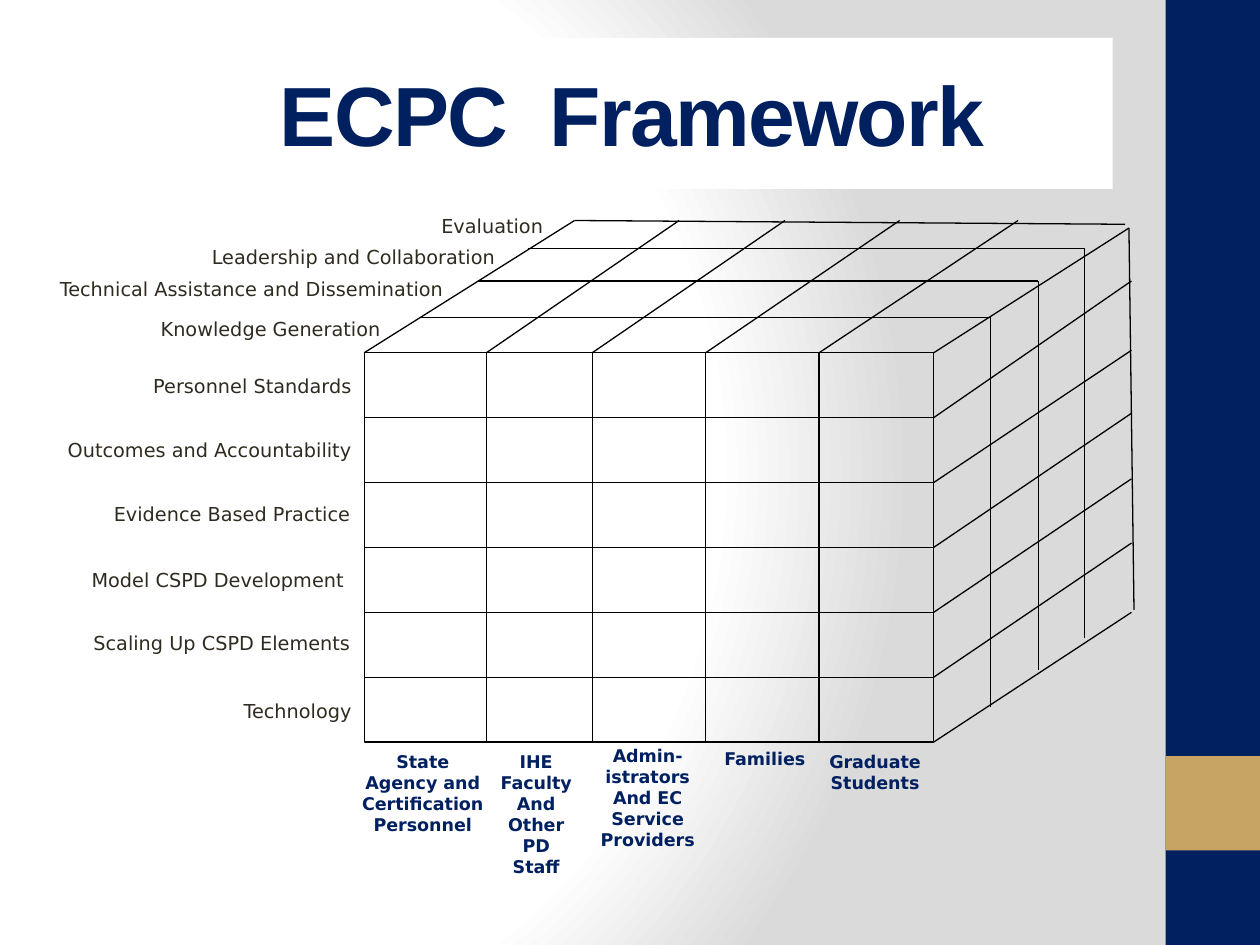
from typing import NamedTuple

from pptx import Presentation
from pptx.dml.color import RGBColor
from pptx.enum.shapes import MSO_CONNECTOR, MSO_SHAPE
from pptx.enum.text import MSO_ANCHOR, PP_ALIGN
from pptx.oxml import parse_xml
from pptx.oxml.ns import nsdecls, qn
from pptx.util import Inches, Pt

RECTANGLE = MSO_SHAPE.RECTANGLE
STRAIGHT = MSO_CONNECTOR.STRAIGHT
CENTER, RIGHT = PP_ALIGN.CENTER, PP_ALIGN.RIGHT
MIDDLE = MSO_ANCHOR.MIDDLE

COLORS = {"navy": "002060", "gold": "C8A464", "white": "FFFFFF",
          "gray": "DADADA", "ink": "2F2B20", "line": "000000"}
TITLE_FONT, LABEL_FONT = "Arial", "DejaVu Sans"

# The slide is a grid of 10 columns by 7.5 rows of square cells.
COLUMNS, ROWS = 10, 7.5
CELL = Inches(1)


class Box(NamedTuple):
    left: float
    top: float
    width: float
    height: float


class Label(NamedTuple):
    text: str
    box: Box


class Layer(NamedTuple):
    """A slice of the cube's depth: top edge, then right edge downwards."""
    left: float
    right: float
    top: float


# Front face of the cube, and where its edges meet the back
FRONT = Box(2.89, 2.8, 4.52, 3.09)
FRONT_RIGHT = FRONT.left + FRONT.width
FRONT_BOTTOM = FRONT.top + FRONT.height
FRONT_ROWS = 6
ROW_HEIGHT = FRONT.height / FRONT_ROWS
COLUMN_EDGES = [FRONT.left, 3.86, 4.7, 5.6, 6.5, FRONT_RIGHT]
BACK_COLUMN_EDGES = [4.56, 5.39, 6.23, 7.14, 8.08, 8.96]
BACK_TOP, BACK_RIGHT, BACK_CORNER = 1.75, 8.98, (8.96, 1.81)
BACK_ROW_EDGES = [2.23, 2.78, 3.28, 3.8, 4.31, 4.86]
LAYERS = [Layer(4.19, 8.61, 1.97), Layer(3.79, 8.24, 2.23), Layer(3.34, 7.86, 2.52)]

# Right edge and top of each right-aligned label
LABEL_WIDTH, LABEL_HEIGHT = 3.4, 0.26
SIDE_LABELS = [
    ("Evaluation", 4.41, 1.65),
    ("Leadership and Collaboration", 4.03, 1.9),
    ("Technical Assistance and Dissemination", 3.62, 2.15),
    ("Knowledge Generation", 3.12, 2.47),
    ("Personnel Standards", 2.89, 2.92),
    ("Outcomes and Accountability", 2.89, 3.43),
    ("Evidence Based Practice", 2.88, 3.94),
    ("Model CSPD Development", 2.83, 4.46),
    ("Scaling Up CSPD Elements", 2.88, 4.96),
    ("Technology", 2.89, 5.5),
]
COLUMN_LABELS = [
    Label("State Agency and Certification Personnel", Box(2.76, 5.91, 1.19, 0.77)),
    Label("IHE Faculty\nAnd Other PD Staff", Box(3.85, 5.91, 0.81, 1.11)),
    Label("Admin-\nistrators\nAnd EC Service\nProviders", Box(4.6, 5.86, 1.08, 1.11)),
    Label("Families", Box(5.64, 5.89, 0.86, 0.27)),
    Label("Graduate\nStudents", Box(6.48, 5.91, 0.93, 0.44)),
]


def grid(cells: float) -> int:
    return round(cells * CELL)


def color(name: str) -> RGBColor:
    return RGBColor.from_string(COLORS[name])


def set_background(slide) -> None:
    """Radial gradient, which python-pptx cannot make by itself."""
    slide.background.fill.solid()
    properties = slide.background._cSld.bg.bgPr
    stops = "".join(
        f'<a:gs pos="{share * 1000}"><a:srgbClr val="{COLORS[name]}"/></a:gs>'
        for share, name in [(0, "white"), (75, "white"), (100, "gray")])
    gradient = parse_xml(
        f'<a:gradFill {nsdecls("a")} rotWithShape="1"><a:gsLst>{stops}</a:gsLst>'
        '<a:path path="circle"><a:fillToRect l="20000" t="50000" r="100000" b="50000"/>'
        '</a:path></a:gradFill>')
    properties.replace(properties.find(qn("a:solidFill")), gradient)


def add_bar(slide, box: Box, fill: str) -> None:
    bar = slide.shapes.add_shape(RECTANGLE, *map(grid, box))
    bar.shadow.inherit = False
    bar.fill.solid()
    bar.fill.fore_color.rgb = color(fill)
    bar.line.fill.background()


def add_line(slide, x1: float, y1: float, x2: float, y2: float) -> None:
    line = slide.shapes.add_connector(STRAIGHT, *map(grid, (x1, y1, x2, y2)))
    line.line.color.rgb = color("line")
    line.line.width = Pt(0.75)
    line._element.spPr.append(parse_xml(f'<a:effectLst {nsdecls("a")}/>'))


def format_text(frame, font_name: str, size: float, ink: str, bold: bool, align) -> None:
    for paragraph in frame.paragraphs:
        paragraph.alignment = align
        for run in paragraph.runs:
            run.font.name = font_name
            run.font.size = Pt(size)
            run.font.bold = bold
            run.font.color.rgb = color(ink)


def add_label(slide, label: Label, size: float, ink: str, bold: bool, align) -> None:
    frame = slide.shapes.add_textbox(*map(grid, label.box)).text_frame
    frame.word_wrap = True
    frame.text = label.text
    format_text(frame, LABEL_FONT, size, ink, bold, align)


def fill_title(slide) -> None:
    title = slide.shapes.title
    title.left, title.top, title.width, title.height = map(grid, (0.5, 0.3, 8.33, 1.2))
    title.fill.solid()
    title.fill.fore_color.rgb = color("white")
    frame = title.text_frame
    frame.text = "ECPC  Framework"
    frame.vertical_anchor = MIDDLE
    frame.margin_left = grid(0.8)
    format_text(frame, TITLE_FONT, 48, "navy", True, CENTER)
    frame.paragraphs[0].runs[0].font._element.set("spc", "-100")


def draw_cube(slide) -> None:
    face = slide.shapes.add_shape(RECTANGLE, *map(grid, FRONT))
    face.shadow.inherit = False
    face.fill.background()
    face.line.color.rgb = color("line")
    face.line.width = Pt(0.75)

    for x in COLUMN_EDGES[1:-1]:
        add_line(slide, x, FRONT.top, x, FRONT_BOTTOM)
    for x, back_x in zip(COLUMN_EDGES[:-1], BACK_COLUMN_EDGES):
        add_line(slide, x, FRONT.top, back_x, BACK_TOP)
    add_line(slide, FRONT_RIGHT, FRONT.top, *BACK_CORNER)

    for row, back_y in enumerate(BACK_ROW_EDGES, start=1):
        y = FRONT.top + row * ROW_HEIGHT
        if row < FRONT_ROWS:
            add_line(slide, FRONT.left, y, FRONT_RIGHT, y)
        add_line(slide, FRONT_RIGHT, y, BACK_RIGHT, back_y)

    for layer in LAYERS:
        add_line(slide, layer.left, layer.top, layer.right, layer.top)
        add_line(slide, layer.right, layer.top, layer.right, layer.top + FRONT.height)
    add_line(slide, BACK_COLUMN_EDGES[0], BACK_TOP, 8.93, 1.78)
    add_line(slide, *BACK_CORNER, 9, 4.84)


def main() -> None:
    deck = Presentation()
    deck.slide_width, deck.slide_height = grid(COLUMNS), grid(ROWS)
    slide = deck.slides.add_slide(deck.slide_layouts.get_by_name("Title Only"))
    set_background(slide)
    add_bar(slide, Box(9.25, 0, 0.75, ROWS), "navy")
    add_bar(slide, Box(9.25, 6, 0.75, 0.75), "gold")
    fill_title(slide)
    draw_cube(slide)
    for text, right, top in SIDE_LABELS:
        box = Box(right - LABEL_WIDTH, top, LABEL_WIDTH, LABEL_HEIGHT)
        add_label(slide, Label(text, box), 11, "ink", False, RIGHT)
    for label in COLUMN_LABELS:
        add_label(slide, label, 10, "navy", True, CENTER)
    deck.save("out.pptx")


if __name__ == "__main__":
    main()
